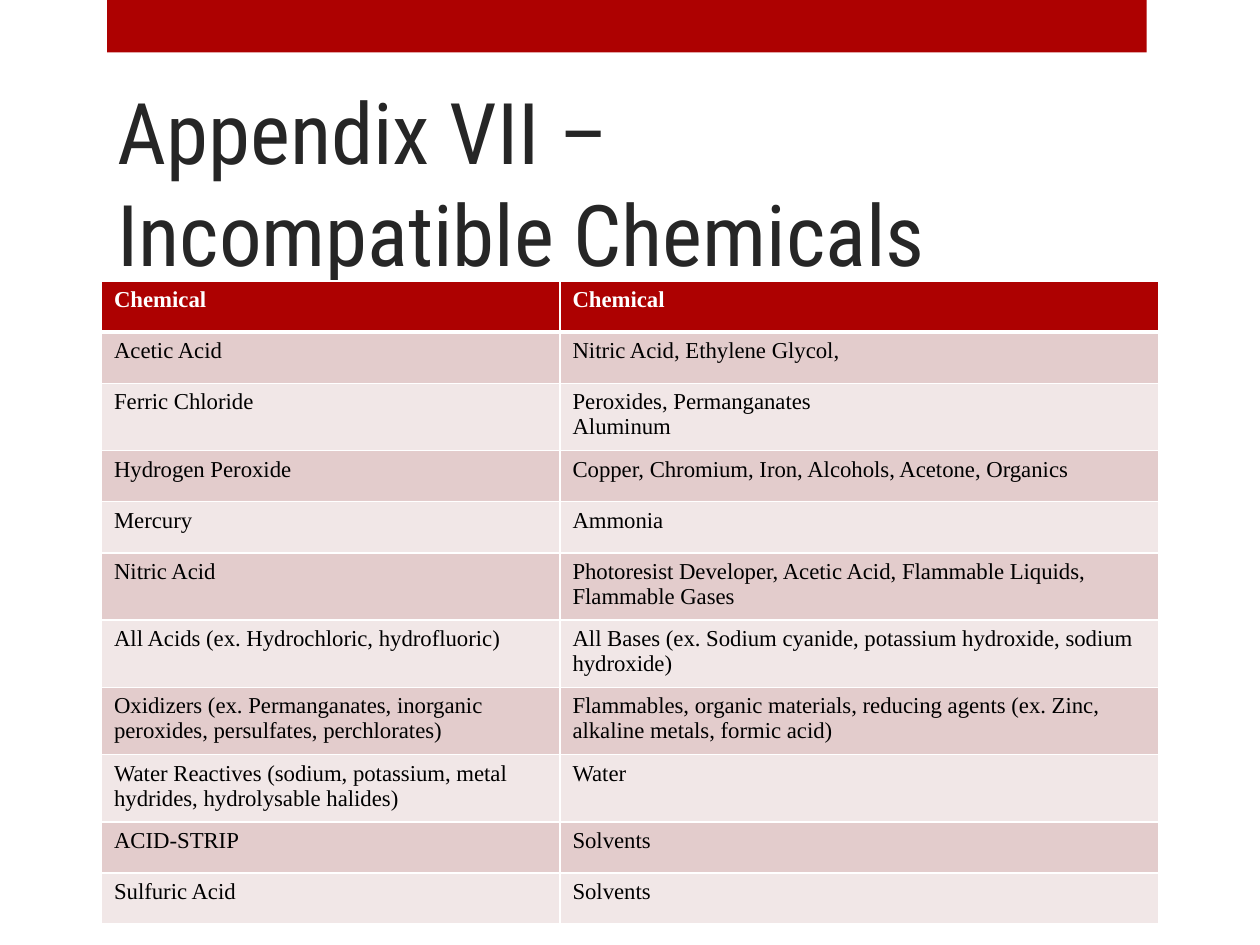
from typing import NamedTuple

from lxml.etree import SubElement
from pptx import Presentation
from pptx.dml.color import RGBColor
from pptx.enum.shapes import MSO_SHAPE
from pptx.enum.text import MSO_ANCHOR
from pptx.oxml.ns import qn
from pptx.util import Pt

RED = RGBColor(0xAD, 0x01, 0x01)
DARK = RGBColor(0x26, 0x26, 0x26)
BLACK = RGBColor(0, 0, 0)
WHITE = RGBColor(0xFF, 0xFF, 0xFF)
BANDS = (RGBColor(0xE3, 0xCC, 0xCC), RGBColor(0xF1, 0xE7, 0xE7))

TITLE = {"name": "Roboto Condensed", "size": Pt(48.6)}
HEAD = {"name": "Times New Roman", "size": Pt(13), "bold": True}
BODY = {**HEAD, "bold": False}

COLS = (Pt(262), Pt(342))
ROW = Pt(29.2)


class Pair(NamedTuple):
    item: str
    foes: str


PAIRS = (
    Pair("Chemical", "Chemical"),
    Pair("Acetic Acid", "Nitric Acid, Ethylene Glycol,"),
    Pair("Ferric Chloride", "Peroxides, Permanganates\nAluminum"),
    Pair("Hydrogen Peroxide", "Copper, Chromium, Iron, Alcohols, Acetone, Organics"),
    Pair("Mercury", "Ammonia"),
    Pair("Nitric Acid",
         "Photoresist Developer, Acetic Acid, Flammable Liquids, Flammable Gases"),
    Pair("All Acids (ex. Hydrochloric, hydrofluoric)",
         "All Bases (ex. Sodium cyanide, potassium hydroxide, sodium hydroxide)"),
    Pair("Oxidizers (ex. Permanganates, inorganic peroxides, persulfates, perchlorates)",
         "Flammables, organic materials, reducing agents (ex. Zinc, alkaline metals, formic acid)"),
    Pair("Water Reactives (sodium, potassium, metal hydrides, hydrolysable halides)", "Water"),
    Pair("ACID-STRIP", "Solvents"),
    Pair("Sulfuric Acid", "Solvents"),
)


def write(frame, text: str, form: dict, color: RGBColor) -> None:
    frame.text = text
    for para in frame.paragraphs:
        for run in para.runs:
            for key, value in form.items():
                setattr(run.font, key, value)
            run.font.color.rgb = color


def edge(cell, side: str, width: int) -> None:
    line = SubElement(cell._tc.get_or_add_tcPr(), qn(f"a:ln{side}"), w=str(width))
    fill = SubElement(line, qn("a:solidFill"))
    SubElement(fill, qn("a:srgbClr"), val=str(WHITE))


def draw_cell(cell, text: str, row: int) -> None:
    head = row == 0
    write(cell.text_frame, text, HEAD if head else BODY, WHITE if head else BLACK)
    # Borders come before the fill in the cell properties
    wide = {"T": row == 1, "B": head}
    for side in "LRTB":
        edge(cell, side, Pt(3 if wide.get(side) else 1))
    cell.fill.solid()
    cell.fill.fore_color.rgb = RED if head else BANDS[(row - 1) % 2]


def draw_table(slide, pairs: tuple[Pair, ...]) -> None:
    table = slide.shapes.add_table(
        len(pairs), len(COLS), Pt(58), Pt(160.6), sum(COLS), ROW * len(pairs)).table
    for col, width in zip(table.columns, COLS):
        col.width = width
    for row, pair in enumerate(pairs):
        table.rows[row].height = ROW
        for col, text in enumerate(pair):
            draw_cell(table.cell(row, col), text, row)


def main() -> None:
    deck = Presentation()
    deck.slide_width, deck.slide_height = Pt(720), Pt(540)
    slide = deck.slides.add_slide(deck.slide_layouts[6])

    # Top bar
    bar = slide.shapes.add_shape(MSO_SHAPE.RECTANGLE, Pt(61.2), Pt(0), Pt(594), Pt(30))
    bar.shadow.inherit = False
    bar.fill.solid()
    bar.fill.fore_color.rgb = RED
    bar.line.fill.background()

    # Title
    frame = slide.shapes.add_textbox(Pt(60), Pt(39.6), Pt(534), Pt(126)).text_frame
    frame.word_wrap = True
    frame.vertical_anchor = MSO_ANCHOR.BOTTOM
    write(frame, "Appendix VII – Incompatible Chemicals", TITLE, DARK)

    # Chemicals and what they must not meet
    draw_table(slide, PAIRS)
    deck.save("out.pptx")


if __name__ == "__main__":
    main()
